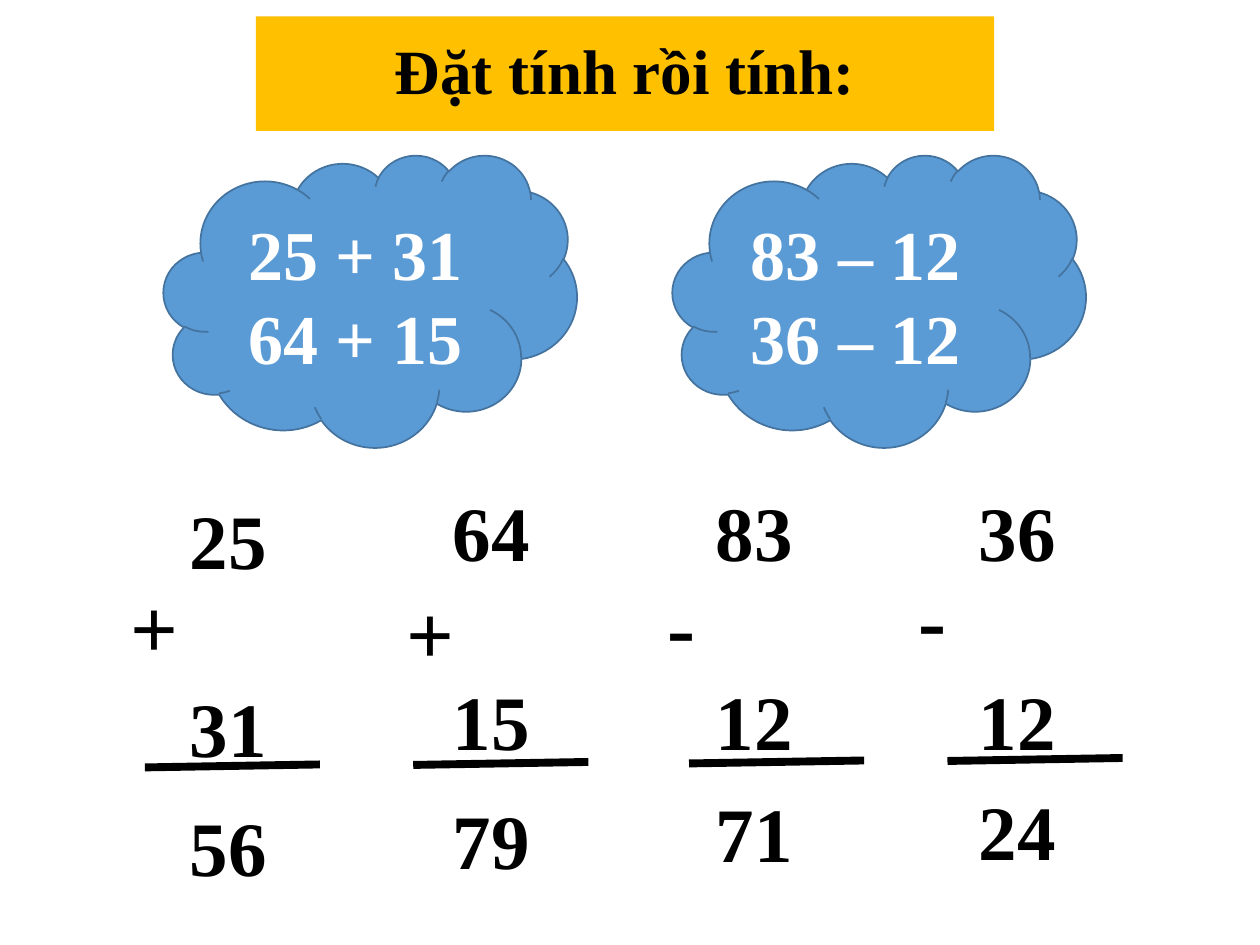
from lxml import etree
from pptx import Presentation
from pptx.dml.color import RGBColor
from pptx.enum import shapes, text
from pptx.oxml.ns import qn
from pptx.util import Cm, Pt

FONT = "Times New Roman"
COLORS = {"title": "FFC000", "cloud": "5B9BD5", "outline": "43739E",
          "ink": "000000", "light": "FFFFFF"}

TITLE = "Đặt tính rồi tính:"
CLOUDS = [(3.3, ["25 + 31", "64 + 15"]),
          (13.56, ["83 – 12 ", "36 – 12 "])]
# Lengths in cm; "sign_at" and "rule_at" are left, top
SUMS = [
    {"numbers": ["25", "31"], "sign": "+", "result": "56", "top": 9.8,
     "sign_at": (2.39, 11.46), "rule_at": (2.92, 15.47), "result_top": 16},
    {"numbers": ["64", "15"], "sign": "+", "result": "79", "top": 9.65,
     "sign_at": (7.95, 11.58), "rule_at": (8.33, 15.42), "result_top": 15.85},
    {"numbers": ["83", "12"], "sign": "-", "result": "71", "top": 9.65,
     "sign_at": (13.21, 11.43), "rule_at": (13.89, 15.39), "result_top": 15.72},
    {"numbers": ["36", "12"], "sign": "-", "result": "24", "top": 9.65,
     "sign_at": (18.26, 11.3), "rule_at": (19.1, 15.34), "result_top": 15.67},
]
COLUMN_LEFT, COLUMN_STEP = 3.58, 5.3
RULE_WIDTH, RULE_RISE = 3.53, 0.06


def rgb(name):
    return RGBColor.from_string(COLORS[name])


def write(tf, lines, size, color="ink", align=text.PP_ALIGN.LEFT,
          anchor=text.MSO_ANCHOR.TOP, gap=0, spacing=None):
    """Fill a text frame, one paragraph a line, with gap points between them."""
    tf.word_wrap = True
    tf.vertical_anchor = anchor
    for i, line in enumerate(lines):
        p = tf.paragraphs[0] if i == 0 else tf.add_paragraph()
        p.alignment = align
        p.line_spacing = spacing
        p.space_before = Pt(gap if i else 0)
        r = p.add_run()
        r.text = line
        r.font.name, r.font.size, r.font.bold = FONT, Pt(size), True
        r.font.color.rgb = rgb(color)


def add_text(s, lines, left, top, width, height, **style):
    box = s.shapes.add_textbox(Cm(left), Cm(top), Cm(width), Cm(height))
    write(box.text_frame, lines, **style)


def add_title(s):
    title = s.shapes.title
    title.left, title.top, title.width, title.height = map(Cm, (5.16, 0.33, 14.88, 2.31))
    title.fill.solid()
    title.fill.fore_color.rgb = rgb("title")
    write(title.text_frame, [TITLE], 36, align=text.PP_ALIGN.CENTER,
          anchor=text.MSO_ANCHOR.MIDDLE, spacing=0.9)


def add_cloud(s, left, lines):
    sp = s.shapes.add_shape(shapes.MSO_SHAPE.CLOUD, Cm(left), Cm(3.12), Cm(8.33), Cm(5.89))
    sp.shadow.inherit = False
    sp.fill.solid()
    sp.fill.fore_color.rgb = rgb("cloud")
    sp.line.color.rgb = rgb("outline")
    sp.line.width = Pt(1)
    write(sp.text_frame, lines, 40, color="light", align=text.PP_ALIGN.CENTER,
          anchor=text.MSO_ANCHOR.MIDDLE)


def add_rule(s, left, top):
    rule = s.shapes.add_connector(shapes.MSO_CONNECTOR.STRAIGHT, Cm(left), Cm(top),
                                  Cm(left + RULE_WIDTH), Cm(top - RULE_RISE))
    rule.line.color.rgb = rgb("ink")
    rule.line.width = Pt(4.5)
    etree.SubElement(rule._element.spPr, qn("a:effectLst"))


def main():
    prs = Presentation()
    prs.slide_width, prs.slide_height = Cm(25.4), Cm(19.05)
    s = prs.slides.add_slide(prs.slide_layouts[5])
    add_title(s)
    for left, lines in CLOUDS:
        add_cloud(s, left, lines)
    for i, item in enumerate(SUMS):
        left = COLUMN_LEFT + i * COLUMN_STEP
        add_text(s, item["numbers"], left, item["top"], 4.09, 5.89, size=44, gap=55)
        add_text(s, [item["sign"]], *item["sign_at"], 1.19, 2.31, size=48)
        add_rule(s, *item["rule_at"])
        add_text(s, [item["result"]], left, item["result_top"], 3.4, 2.13, size=44)
    prs.save("out.pptx")


if __name__ == "__main__":
    main()
